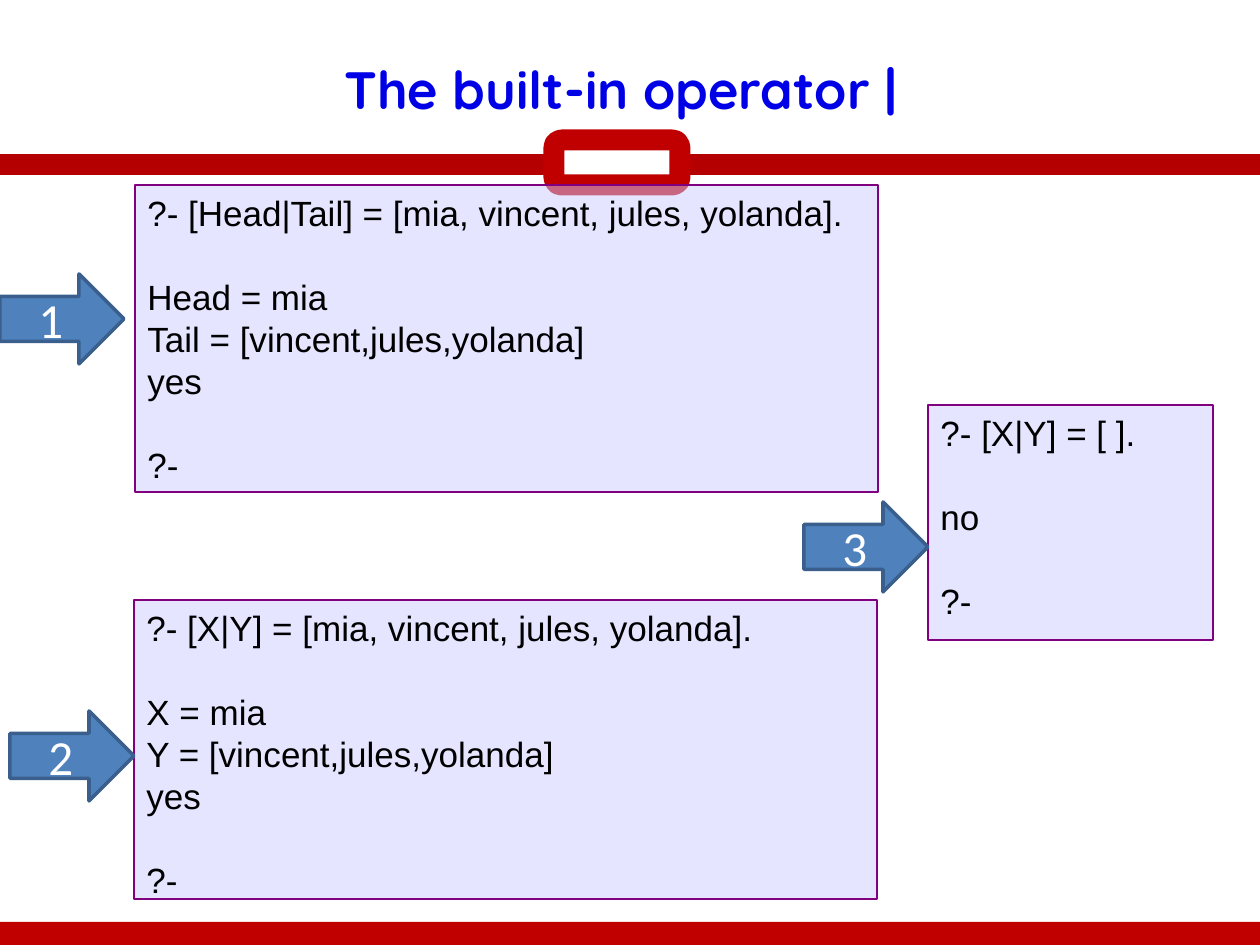
from lxml.etree import SubElement
from pptx import Presentation
from pptx.dml.color import RGBColor as Rgb
from pptx.enum.shapes import MSO_CONNECTOR as Conn, MSO_SHAPE as Kind
from pptx.enum.text import MSO_ANCHOR as Anchor, PP_ALIGN as Align
from pptx.oxml.ns import qn
from pptx.util import Pt

SCALE = 914400 / 126
INK = {"title": "0000E6", "bar": "B40000", "red": "C00000", "white": "FFFFFF",
       "code": "CCCCFF", "edge": "800080", "text": "000000",
       "arrow": "4F81BD", "rim": "3A5F8C"}


class Deck:
    """Draws the styled elements of one slide."""

    def __init__(self, width, height):
        self.prs = Presentation()
        self.prs.slide_width, self.prs.slide_height = self.emu(width, height)
        self.slide = self.prs.slides.add_slide(self.prs.slide_layouts[6])
        self.shapes = self.slide.shapes

    def emu(self, *sizes):
        return [round(size * SCALE) for size in sizes]

    def font(self, para, name, size, ink, bold=False):
        para.font.name, para.font.size, para.font.bold = name, Pt(size), bold
        para.font.color.rgb = Rgb.from_string(INK[ink])

    def stroke(self, line, ink, width):
        line.color.rgb = Rgb.from_string(INK[ink])
        line.width = Pt(width)

    def shape(self, kind, box, fill, edge=None, width=0):
        shape = self.shapes.add_shape(kind, *self.emu(*box))
        shape.shadow.inherit = False
        shape.fill.solid()
        shape.fill.fore_color.rgb = Rgb.from_string(INK[fill])
        if edge:
            self.stroke(shape.line, edge, width)
        else:
            shape.line.fill.background()
        return shape

    def bar(self, y, width):
        line = self.shapes.add_connector(Conn.STRAIGHT, *self.emu(0, y, 1260, y))
        self.stroke(line.line, "bar", width)
        SubElement(line._element.spPr, qn("a:effectLst"))

    def label(self, frame, text, *style):
        frame.word_wrap = True
        frame.vertical_anchor = Anchor.MIDDLE
        para = frame.paragraphs[0]
        para.text, para.alignment = text, Align.CENTER
        self.font(para, *style)

    def title(self, box, text):
        frame = self.shapes.add_textbox(*self.emu(*box)).text_frame
        self.label(frame, text, "Quicksand", 30, "title", True)

    def arrow(self, x, y, text):
        shape = self.shape(Kind.RIGHT_ARROW, (x, y, 124, 90), "arrow", "rim", 2)
        self.label(shape.text_frame, text, "Calibri", 28, "white")

    def code(self, box, query, *reply):
        shape = self.shape(Kind.RECTANGLE, box, "code", "edge", 0.75)
        color = shape.fill._xPr.find(qn("a:solidFill"))[0]
        SubElement(color, qn("a:alpha"), val="50000")
        frame = shape.text_frame
        frame.word_wrap, frame.vertical_anchor = True, Anchor.TOP
        lines = [query, *reply, "?-"]
        for i, text in enumerate(lines):
            para = frame.paragraphs[0] if i == 0 else frame.add_paragraph()
            para.text, para.alignment = text, Align.LEFT
            if i in (1, len(lines) - 1):
                para.space_before = Pt(24)
            self.font(para, "Arial", 20, "text")


def main():
    deck = Deck(1260, 945)
    deck.bar(165, 12)
    deck.shape(Kind.RECTANGLE, (-1, 922, 1265, 26), "red")
    deck.shape(Kind.ROUNDED_RECTANGLE, (554, 140, 126, 45), "white", "red", 12)
    deck.title((54, 35, 1134, 106), "The built-in operator |")
    deck.code((135, 185, 743, 307), "?- [Head|Tail] = [mia, vincent, jules, yolanda].",
              "Head = mia", "Tail = [vincent,jules,yolanda]", "yes")
    deck.code((134, 600, 743, 299), "?- [X|Y] = [mia, vincent, jules, yolanda].",
              "X = mia", "Y = [vincent,jules,yolanda]", "yes")
    deck.code((928, 405, 285, 235), "?- [X|Y] = [ ].", "no")
    for x, y, text in ((0, 274, "1"), (10, 711, "2"), (804, 502, "3")):
        deck.arrow(x, y, text)
    deck.prs.save("out.pptx")


if __name__ == "__main__":
    main()
